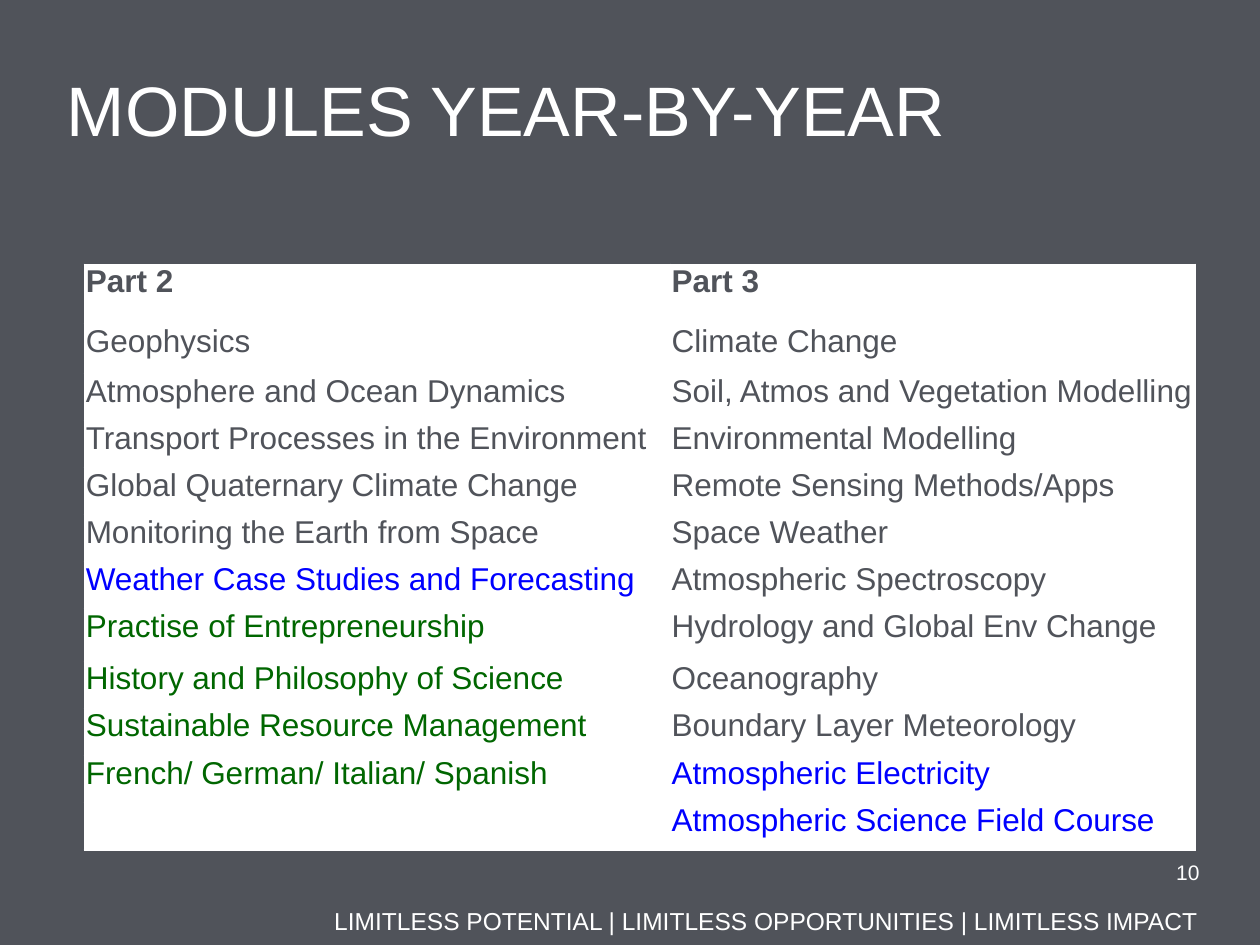
from pptx import Presentation
from pptx.dml.color import RGBColor
from pptx.enum.text import MSO_ANCHOR, PP_ALIGN
from pptx.util import Cm, Pt

SLATE, WHITE, BLUE, GREEN = "50535A", "FFFFFF", "0000FF", "006600"

PART_2 = [
    ("Part 2", SLATE),
    ("Geophysics", SLATE),
    ("Atmosphere and Ocean Dynamics", SLATE),
    ("Transport Processes in the Environment", SLATE),
    ("Global Quaternary Climate Change", SLATE),
    ("Monitoring the Earth from Space", SLATE),
    ("Weather Case Studies and Forecasting", BLUE),
    ("Practise of Entrepreneurship", GREEN),
    ("History and Philosophy of Science", GREEN),
    ("Sustainable Resource Management", GREEN),
    ("French/ German/ Italian/ Spanish", GREEN),
    ("", SLATE),
]
PART_3 = [
    ("Part 3", SLATE),
    ("Climate Change", SLATE),
    ("Soil, Atmos and Vegetation Modelling", SLATE),
    ("Environmental Modelling", SLATE),
    ("Remote Sensing Methods/Apps", SLATE),
    ("Space Weather", SLATE),
    ("Atmospheric Spectroscopy", SLATE),
    ("Hydrology and Global Env Change", SLATE),
    ("Oceanography", SLATE),
    ("Boundary Layer Meteorology", SLATE),
    ("Atmospheric Electricity", BLUE),
    ("Atmospheric Science Field Course", BLUE),
]
COLUMN_WIDTHS = [11.81, 10.59]
ROW_HEIGHT = 0.95
TALLER_ROWS = {0: 1.2, 1: 1.0, 7: 1.05}


def color(value):
    return RGBColor.from_string(value)


def set_font(paragraph, size, value, bold=False):
    font = paragraph.font
    font.name = "Arial"
    font.size = Pt(size)
    font.bold = bold
    font.color.rgb = color(value)


def add_text(page, text, left, top, width, height, size,
             align=PP_ALIGN.LEFT, anchor=MSO_ANCHOR.BOTTOM, wrap=True):
    box = page.shapes.add_textbox(Cm(left), Cm(top), Cm(width), Cm(height))
    frame = box.text_frame
    frame.margin_left = frame.margin_right = 0
    frame.margin_top = frame.margin_bottom = 0
    frame.word_wrap = wrap
    frame.vertical_anchor = anchor
    para = frame.paragraphs[0]
    para.text = text
    para.alignment = align
    set_font(para, size, WHITE)


def fill_cell(cell, text, value, bold):
    cell.fill.solid()
    cell.fill.fore_color.rgb = color(WHITE)
    cell.margin_left = cell.margin_right = Cm(0.03)
    cell.margin_top = cell.margin_bottom = 0
    para = cell.text_frame.paragraphs[0]
    para.text = text
    set_font(para, 18, value, bold)


def add_modules(page, columns, left, top):
    """Add a table with one column per part, its heading in the first row."""
    heights = [TALLER_ROWS.get(row, ROW_HEIGHT) for row in range(len(columns[0]))]
    table = page.shapes.add_table(
        len(heights), len(columns), Cm(left), Cm(top),
        Cm(sum(COLUMN_WIDTHS)), Cm(sum(heights))).table
    for row, height in zip(table.rows, heights):
        row.height = Cm(height)
    for index, modules in enumerate(columns):
        table.columns[index].width = Cm(COLUMN_WIDTHS[index])
        for row, (name, value) in enumerate(modules):
            fill_cell(table.cell(row, index), name, value, bold=row == 0)


def main():
    deck = Presentation()
    deck.slide_width, deck.slide_height = Cm(25.4), Cm(19.05)
    page = deck.slides.add_slide(deck.slide_layouts[6])
    page.background.fill.solid()
    page.background.fill.fore_color.rgb = color(SLATE)

    add_text(page, "LIMITLESS POTENTIAL | LIMITLESS OPPORTUNITIES | LIMITLESS IMPACT",
             5.36, 18.26, 18.8, 0.6, 14, align=PP_ALIGN.RIGHT)
    add_text(page, "MODULES YEAR-BY-YEAR", 1.35, 0.74, 23, 2.3, 40, wrap=False)
    add_text(page, "10", 22.3, 17.32, 1.88, 0.7, 12,
             align=PP_ALIGN.RIGHT, anchor=MSO_ANCHOR.TOP)
    add_modules(page, [PART_2, PART_3], 1.7, 5.33)
    deck.save("out.pptx")


if __name__ == "__main__":
    main()
